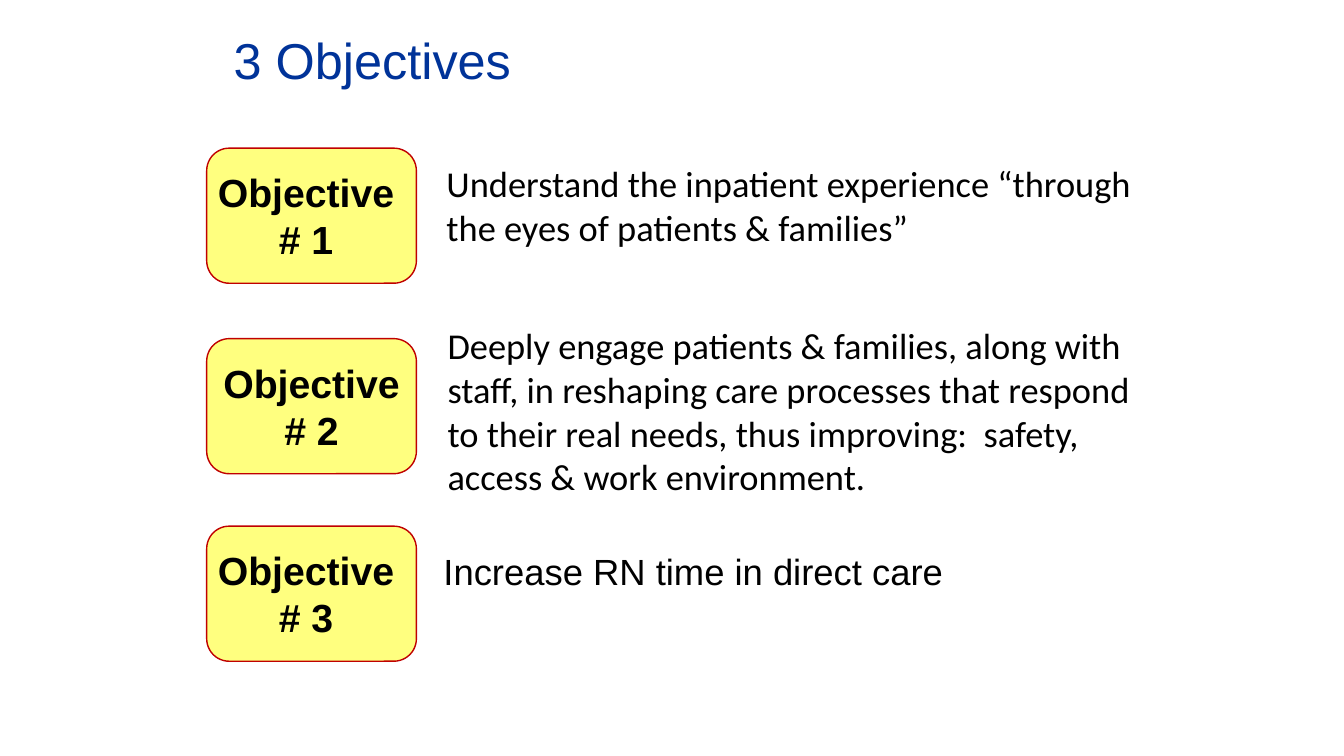
from dataclasses import dataclass

from lxml import etree
from pptx import Presentation
from pptx import util as u
from pptx.dml.color import RGBColor
from pptx.enum import shapes, text
from pptx.oxml.ns import qn


@dataclass(frozen=True)
class Theme:
    ink: RGBColor = RGBColor(0x00, 0x00, 0x00)
    title: RGBColor = RGBColor(0x00, 0x33, 0x99)
    badge_fill: RGBColor = RGBColor(0xFF, 0xFF, 0x00)
    badge_line: RGBColor = RGBColor(0xC0, 0x00, 0x00)
    title_size: u.Pt = u.Pt(36)
    badge_size: u.Pt = u.Pt(28)
    body_size: u.Pt = u.Pt(26)
    font: str = "Arial"
    body_font: str = "Calibri"


theme = Theme()


def add_run(para, words, font, size, color, bold=False):
    span = para.add_run()
    span.text = words
    span.font.name = font
    span.font.size = size
    span.font.bold = bold
    span.font.color.rgb = color


def add_text_box(slide, left, top, width, height):
    """Add a wrapping text box and return its text frame."""
    box = slide.shapes.add_textbox(
        u.Inches(left), u.Inches(top), u.Inches(width), u.Inches(height))
    box.text_frame.word_wrap = True
    return box.text_frame


deck = Presentation()
deck.slide_width = u.Inches(13.33)
deck.slide_height = u.Inches(7.5)
page = deck.slides.add_slide(deck.slide_layouts[6])

# Each objective: badge top, badge lines, text position and size, font, wording
objectives = [
    (1.47, ("Objective ", "# 1 "), (4.33, 1.55, 7.33, 0.97), theme.body_font,
     "Understand the inpatient experience “through the eyes of patients & families”"),
    (3.36, ("Objective", "# 2"), (4.34, 3.16, 7.08, 1.85), theme.body_font,
     "Deeply engage patients & families, along with staff, in reshaping care "
     "processes that respond to their real needs, thus improving:  safety, "
     "access & work environment."),
    (5.22, ("Objective ", "# 3 "), (4.3, 5.4, 6.93, 0.54), theme.font,
     "Increase RN time in direct care"),
]

hanging = u.Inches(0.19)
for badge_top, badge_lines, text_area, text_font, wording in objectives:
    badge = page.shapes.add_shape(
        shapes.MSO_SHAPE.FLOWCHART_ALTERNATE_PROCESS,
        u.Inches(2.05), u.Inches(badge_top), u.Inches(2.08), u.Inches(1.34))
    badge.shadow.inherit = False
    badge.fill.solid()
    badge.fill.fore_color.rgb = theme.badge_fill
    fill_color = badge.fill._xPr.find(qn("a:solidFill"))[0]
    etree.SubElement(fill_color, qn("a:alpha"), val="50000")
    badge.line.color.rgb = theme.badge_line
    badge.line.width = u.Pt(1)

    frame = badge.text_frame
    frame.word_wrap = False
    frame.vertical_anchor = text.MSO_ANCHOR.MIDDLE
    for index, line in enumerate(badge_lines):
        para = frame.add_paragraph() if index else frame.paragraphs[0]
        para.alignment = text.PP_ALIGN.CENTER
        properties = para._p.get_or_add_pPr()
        properties.set("marL", str(hanging))
        properties.set("indent", str(-hanging))
        add_run(para, line, theme.font, theme.badge_size, theme.ink, bold=True)

    frame = add_text_box(page, *text_area)
    frame.auto_size = text.MSO_AUTO_SIZE.SHAPE_TO_FIT_TEXT
    add_run(frame.paragraphs[0], wording, text_font, theme.body_size, theme.ink)

frame = add_text_box(page, 2.22, 0, 9, 1.25)
frame.vertical_anchor = text.MSO_ANCHOR.MIDDLE
frame.paragraphs[0].line_spacing = 0.9
add_run(frame.paragraphs[0], "3 Objectives", theme.font, theme.title_size, theme.title)

deck.save("out.pptx")
